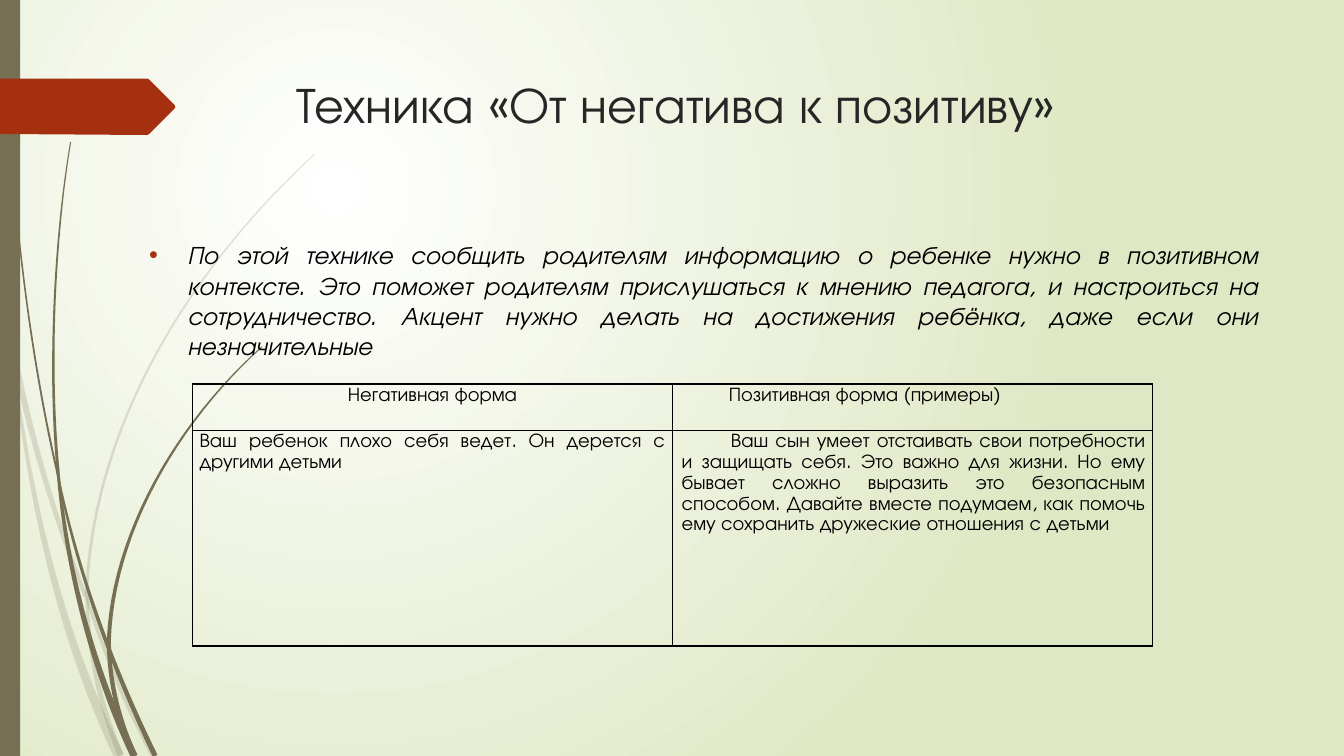
from math import hypot

from lxml import etree
from pptx import Presentation
from pptx.dml.color import RGBColor
from pptx.enum.shapes import MSO_SHAPE
from pptx.enum.text import PP_ALIGN
from pptx.oxml.ns import qn
from pptx.util import Inches, Pt

FONT = "TeX Gyre Adventor"
WHITE = RGBColor(0xFF, 0xFF, 0xFF)
PALE_GREEN = RGBColor(0xDF, 0xE8, 0xC4)
OLIVE = RGBColor(0x76, 0x6F, 0x54)
RUST = RGBColor(0xA5, 0x30, 0x10)
CHARCOAL = RGBColor(0x26, 0x26, 0x26)
BLACK = RGBColor(0, 0, 0)
CURVE_STEPS = 24

# Each blade: four control points of its centre line, then its start and end width.
PALE_BLADES = [
    ((0.02, 2.9), (0.2, 3.95), (0.45, 4.9), (0.85, 5.92), 0.07, 0.04),
    ((0.86, 5.92), (1.02, 6.45), (1.25, 7), (1.52, 7.5), 0.03, 0.05),
    ((0.12, 3.5), (0.3, 5), (0.6, 6.3), (1.18, 7.5), 0.02, 0.1),
    ((3.12, 1.53), (1.9, 2.65), (0.93, 4.2), (0.86, 5.86), 0.01, 0.03),
    ((0.86, 5.86), (0.88, 6.5), (0.98, 6.95), (1.2, 7.5), 0.03, 0.06),
]
DARK_BLADES = [
    ((0.04, 0), (0.07, 1.6), (0.25, 3.3), (0.56, 4.65), 0.01, 0.02),
    ((0.56, 4.65), (0.75, 5.6), (1.08, 6.55), (1.54, 7.5), 0.02, 0.05),
    ((0.7, 1.41), (0.55, 2.3), (0.47, 3.6), (0.58, 4.72), 0.01, 0.03),
    ((0.58, 4.72), (0.66, 5.6), (0.9, 6.6), (1.33, 7.5), 0.03, 0.07),
    ((2.6, 3.44), (1.75, 4.2), (1.12, 5.3), (1.08, 6.35), 0.01, 0.04),
    ((1.08, 6.35), (1.08, 6.8), (1.2, 7.2), (1.34, 7.5), 0.04, 0.05),
]


def write(frame, text, size, color=BLACK, italic=False, align=PP_ALIGN.LEFT,
          margin=0, indent=0, spacing=None, before=None):
    """Fill the frame with one formatted paragraph and return its properties element."""
    frame.word_wrap = True
    para = frame.paragraphs[0]
    para.alignment, para.line_spacing, para.space_before = align, spacing, before
    layout = para._p.get_or_add_pPr()
    layout.set("marL", str(Inches(margin)))
    layout.set("indent", str(Inches(indent)))
    span = para.add_run()
    span.text = text
    span.font.name, span.font.size, span.font.italic = FONT, Pt(size), italic
    span.font.color.rgb = color
    return layout


def add_outline(points, color):
    corners = [(Inches(x), Inches(y)) for x, y in points]
    builder = slide.shapes.build_freeform(*corners[0])
    builder.add_line_segments(corners[1:])
    shape = builder.convert_to_shape()
    shape.shadow.inherit = False
    shape.fill.solid()
    shape.fill.fore_color.rgb = color
    shape.line.fill.background()
    return shape


deck = Presentation()
deck.slide_width, deck.slide_height = Inches(13.33), Inches(7.5)
slide = deck.slides.add_slide(deck.slide_layouts[6])

backdrop = slide.background.fill
backdrop.gradient()
for stop, color in zip(backdrop.gradient_stops, (WHITE, PALE_GREEN)):
    stop.color.rgb = color
gradient = slide.element.find(".//" + qn("a:gradFill"))
gradient.remove(gradient.find(qn("a:lin")))
circle = etree.SubElement(gradient, qn("a:path"), path="circle")
etree.SubElement(circle, qn("a:fillToRect"), l="50000", t="50000", r="100000", b="100000")

for blades, opacity in ((PALE_BLADES, 20), (DARK_BLADES, 100)):
    for *controls, start_width, end_width in blades:
        left_edge, right_edge = [], []
        for step in range(CURVE_STEPS + 1):
            t = step / CURVE_STEPS
            s = 1 - t
            weights = (s ** 3, 3 * t * s * s, 3 * t * t * s, t ** 3)
            slopes = (-s * s, s * s - 2 * t * s, 2 * t * s - t * t, t * t)
            x, y = (sum(w * point[axis] for w, point in zip(weights, controls)) for axis in (0, 1))
            dx, dy = (sum(w * point[axis] for w, point in zip(slopes, controls)) for axis in (0, 1))
            reach = (s * start_width + t * end_width) / 2 / hypot(dx, dy)
            left_edge.append((x - dy * reach, y + dx * reach))
            right_edge.append((x + dy * reach, y - dx * reach))
        blade = add_outline(left_edge + right_edge[::-1], OLIVE)
        if opacity < 100:
            tint = blade.element.spPr.find(".//" + qn("a:srgbClr"))
            etree.SubElement(tint, qn("a:alpha"), val=str(opacity * 1000))

side_bar = slide.shapes.add_shape(MSO_SHAPE.RECTANGLE, 0, 0, Inches(0.2), Inches(7.5))
side_bar.shadow.inherit = False
side_bar.fill.solid()
side_bar.fill.fore_color.rgb = OLIVE
side_bar.line.fill.background()
add_outline([(0, 0.78), (1.46, 0.78), (1.48, 0.79), (1.73, 1.04), (1.74, 1.06),
             (1.73, 1.08), (1.48, 1.33), (1.46, 1.34), (0, 1.33)], RUST)

title = slide.shapes.add_textbox(Inches(2.84), Inches(0.68), Inches(9.75), Inches(1.4))
write(title.text_frame, "Техника «От негатива к позитиву»", 36, color=CHARCOAL)

body = slide.shapes.add_textbox(Inches(1.38), Inches(2.33), Inches(11.2), Inches(4.13))
layout = write(
    body.text_frame,
    "По этой технике сообщить родителям информацию о ребенке нужно в позитивном контексте. "
    "Это поможет родителям прислушаться к мнению педагога, и настроиться "
    "на сотрудничество. Акцент нужно делать на достижения ребёнка, даже если они незначительные",
    18, italic=True, align=PP_ALIGN.JUSTIFY, margin=0.38, indent=-0.38, before=Pt(10))
bullet_color = etree.SubElement(layout, qn("a:buClr"))
etree.SubElement(bullet_color, qn("a:srgbClr"), val=str(RUST))
etree.SubElement(layout, qn("a:buFont"), typeface="Arial")
etree.SubElement(layout, qn("a:buChar"), char="•")

table = slide.shapes.add_table(2, 2, Inches(1.91), Inches(3.81), Inches(9.52), Inches(2.6)).table
table.rows[0].height, table.rows[1].height = Inches(0.46), Inches(2.14)
CELLS = [
    ("Негативная форма", dict(align=PP_ALIGN.CENTER)),
    ("Позитивная форма (примеры)", dict(indent=0.49)),
    ("Ваш ребенок плохо себя ведет. Он дерется с другими детьми", dict(align=PP_ALIGN.JUSTIFY)),
    ("Ваш сын умеет отстаивать свои потребности и защищать себя. Это важно для жизни. "
     "Но ему бывает сложно выразить это безопасным способом. Давайте вместе подумаем, "
     "как помочь ему сохранить дружеские отношения с детьми",
     dict(align=PP_ALIGN.JUSTIFY, margin=0.02, indent=0.49)),
]
for cell, (text, style) in zip(table.iter_cells(), CELLS):
    cell.margin_left = cell.margin_right = Inches(0.07)
    cell.margin_top = cell.margin_bottom = 0
    write(cell.text_frame, text, 14, spacing=1.15, **style)
    cell.fill.background()
    properties = cell._tc.get_or_add_tcPr()
    for place, side in enumerate(("lnL", "lnR", "lnT", "lnB")):
        border = etree.Element(qn("a:" + side), w=str(Pt(1)))
        paint = etree.SubElement(border, qn("a:solidFill"))
        etree.SubElement(paint, qn("a:srgbClr"), val=str(BLACK))
        properties.insert(place, border)

deck.save("out.pptx")
